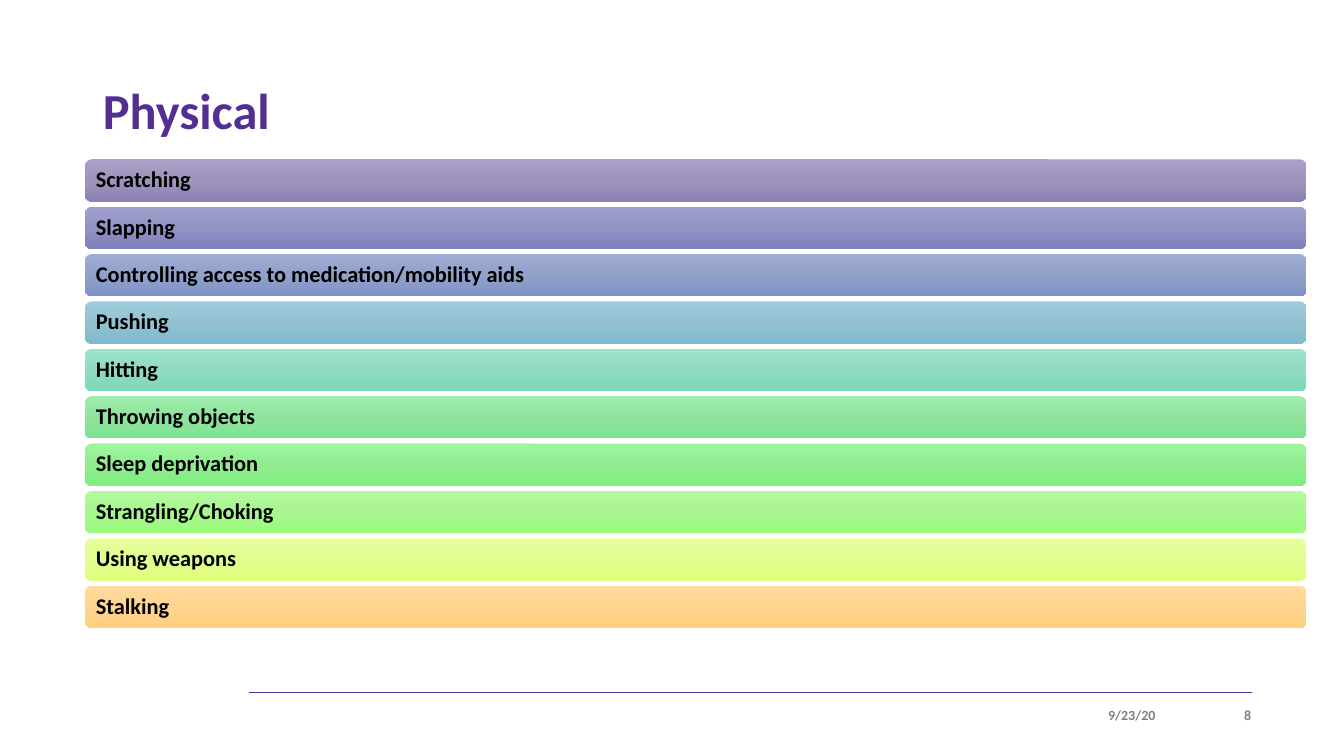
from copy import deepcopy
from dataclasses import dataclass

from pptx import Presentation
from pptx.dml.color import RGBColor
from pptx.enum import shapes, text
from pptx.oxml import ns, xmlchemy
from pptx.util import Inches, Pt


@dataclass(frozen=True)
class Theme:
    face: str = "Calibri"
    purple: str = "542E91"
    grey: str = "808080"
    black: str = "000000"
    title_size: int = 36
    bar_size: int = 16
    footer_size: int = 10


theme = Theme()

# Label, then the top, middle and bottom colour of its bar
BARS = [
    ("Scratching", "AAA0C7", "9E94BC", "8E80B5"),
    ("Slapping", "A0A0CE", "9393C3", "7F7FBD"),
    ("Controlling access to medication/mobility aids", "9FADD5", "92A1CA", "7E92C6"),
    ("Pushing", "9FCCDC", "92C1D2", "7DBBCF"),
    ("Hitting", "9EE4CC", "91DAC1", "7DD9BB"),
    ("Throwing objects", "9EEDAC", "91E3A0", "7CE490"),
    ("Sleep deprivation", "9EF59E", "91EC91", "7CEF7C"),
    ("Strangling/Choking", "B3FA9E", "A8F690", "9AFB7C"),
    ("Using weapons", "E7FF9E", "E2FD90", "E0FF7C"),
    ("Stalking", "FFDB9E", "FFD590", "FFD07C"),
]
BAR_LEFT, BAR_TOP, BAR_WIDTH, BAR_HEIGHT, BAR_STEP = 0.84, 1.58, 12.12, 0.42, 0.47


def write(shape, words, size, color, align, inset_x, inset_y):
    """Fill a shape with one bold, vertically centred paragraph."""
    frame = shape.text_frame
    frame.text = words
    frame.word_wrap = True
    frame.auto_size = text.MSO_AUTO_SIZE.NONE
    frame.vertical_anchor = text.MSO_ANCHOR.MIDDLE
    frame.margin_left = frame.margin_right = Inches(inset_x)
    frame.margin_top = frame.margin_bottom = Inches(inset_y)
    para = frame.paragraphs[0]
    para.alignment = align
    para.font.name = theme.face
    para.font.size = Pt(size)
    para.font.bold = True
    para.font.color.rgb = RGBColor.from_string(color)
    return para


def set_gradient(fill, gs_parent, colors):
    """Apply evenly spaced colours from top to bottom."""
    fill.gradient()
    fill.gradient_angle = 270
    stop_list = gs_parent.find(".//" + ns.qn("a:gsLst"))
    stop_list.insert(1, deepcopy(stop_list[0]))
    for index, (stop, color) in enumerate(zip(fill.gradient_stops, colors)):
        stop.position = index / (len(colors) - 1)
        stop.color.rgb = RGBColor.from_string(color)


deck = Presentation()
deck.slide_width, deck.slide_height = Inches(13.33), Inches(7.5)
page = deck.slides.add_slide(deck.slide_layouts[5])

# Footer rule
rule = page.shapes.add_connector(
    shapes.MSO_CONNECTOR.STRAIGHT, Inches(2.47), Inches(6.87), Inches(12.42), Inches(6.87)
)
rule.line.color.rgb = RGBColor.from_string(theme.purple)
rule.line.width = Pt(0.5)
rule._element.spPr.append(xmlchemy.OxmlElement("a:effectLst"))

# Title
title = page.shapes.title
title.left, title.top = Inches(0.92), Inches(0.4)
title.width, title.height = Inches(11.5), Inches(1.45)
para = write(title, "Physical", theme.title_size, theme.purple, text.PP_ALIGN.LEFT, 0.1, 0.05)
para.line_spacing = 0.9

# Date and slide number
for words, left, width in [("9/23/20", 8.46, 3), ("8", 11.62, 0.79)]:
    box = page.shapes.add_textbox(Inches(left), Inches(6.95), Inches(width), Inches(0.28))
    write(box, words, theme.footer_size, theme.grey, text.PP_ALIGN.RIGHT, 0, 0.05)

# Bars
for row, (label, *colors) in enumerate(BARS):
    bar = page.shapes.add_shape(
        shapes.MSO_SHAPE.ROUNDED_RECTANGLE,
        Inches(BAR_LEFT), Inches(BAR_TOP + row * BAR_STEP), Inches(BAR_WIDTH), Inches(BAR_HEIGHT),
    )
    bar.shadow.inherit = False
    bar.line.fill.background()
    set_gradient(bar.fill, bar._element.spPr, colors)
    para = write(bar, label, theme.bar_size, theme.black, text.PP_ALIGN.LEFT, 0.09, 0.05)
    para.line_spacing = 0.9

deck.save("out.pptx")
